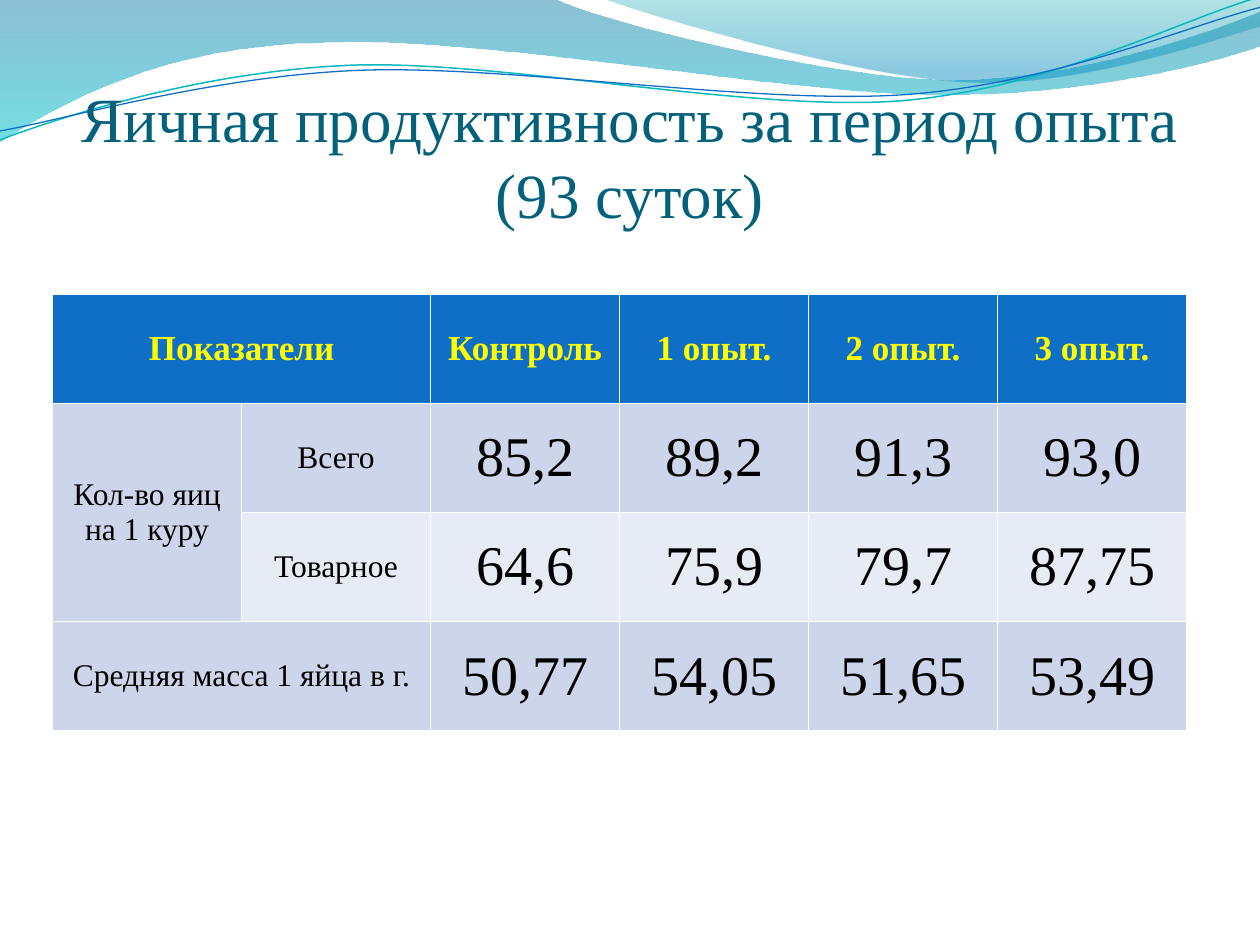
"""Build the slide on egg productivity over the trial period."""
from dataclasses import dataclass

import lxml.etree
import pptx
import pptx.dml.color
import pptx.enum.text
import pptx.oxml.ns
import pptx.util

Cm = pptx.util.Cm
Pt = pptx.util.Pt
qn = pptx.oxml.ns.qn
Point = tuple[float, float]


@dataclass(frozen=True)
class Theme:
    font: str = "Times New Roman"
    title: str = "04617B"
    header_fill: str = "0F6FC6"
    header_text: str = "FFFF00"
    body_text: str = "000000"
    band: str = "CCD5EA"
    light_band: str = "E7EBF5"
    title_size: float = 36
    header_size: float = 20
    label_size: float = 18
    value_size: float = 32


@dataclass(frozen=True)
class GradientStop:
    position: float
    color: str
    opacity: int


@dataclass(frozen=True)
class Wave:
    start: Point
    segments: tuple[tuple[Point, ...], ...]
    gradient: tuple[GradientStop, ...] = ()
    line_color: str = ""
    line_width: float = 0
    rotation: float = 0


THEME = Theme()
COLUMN_WIDTH = 3.81
ROW_HEIGHT = 2.2
LABEL_COLUMNS = 2

WAVES = (
    Wave((0, -0.03), (
        ((11.18, -0.03),),
        ((12.09, 0.43), (16.87, 1.6), (19.25, 1.6)),
        ((21.67, 1.6), (24.33, 0.66), (25.4, 0.23)),
        ((25.43, 0.91),),
        ((24.97, 1.12), (22.1, 1.93), (18.95, 1.91)),
        ((15.8, 1.91), (9.7, 0.71), (6.53, 0.86)),
        ((3.28, 0.89), (1.17, 2.11), (-0.03, 2.87)),
        ((0, -0.03),),
    ), gradient=(GradientStop(0, "0074A1", 45), GradientStop(1, "00C6CF", 55))),
    Wave((12.17, -0.03), (
        ((12.93, 0.28), (17.32, 1.57), (19.53, 1.65)),
        ((21.74, 1.75), (24.41, 0.81), (25.4, 0.53)),
        ((25.4, 0),),
        ((12.17, -0.03),),
    ), gradient=(GradientStop(0, "00A1A9", 30), GradientStop(0.8, "008BBF", 45))),
    Wave((-0.05, 2.22), (
        ((1.19, 1.82), (4.02, 1.04), (7.05, 1.05)),
        ((10.05, 1.07), (15.02, 2.37), (18.08, 2.29)),
        ((21.13, 2.2), (23.87, 0.91), (25.41, 0.55)),
    ), line_color="0AB8BF", line_width=0.85, rotation=357.3),
    Wave((-0.04, 2.04), (
        ((1.16, 1.9), (4.18, 1.15), (7.2, 1.16)),
        ((10.25, 1.18), (15.13, 2.23), (18.18, 2.17)),
        ((21.21, 2.1), (23.93, 1.06), (25.45, 0.75)),
    ), line_color="0F6FC6", line_width=0.75, rotation=357.3),
)

ROWS = (
    ("Показатели", "", "Контроль", "1 опыт.", "2 опыт.", "3 опыт."),
    ("Кол-во яиц на 1 куру", "Всего", "85,2", "89,2", "91,3", "93,0"),
    ("", "Товарное", "64,6", "75,9", "79,7", "87,75"),
    ("Средняя масса 1 яйца в г.", "", "50,77", "54,05", "51,65", "53,49"),
)
MERGES = (((0, 0), (0, 1)), ((1, 0), (2, 0)), ((3, 0), (3, 1)))


def rgb(color: str) -> pptx.dml.color.RGBColor:
    return pptx.dml.color.RGBColor.from_string(color)


def bend_segments(shape, wave: Wave) -> None:
    steps = iter(list(shape.element.spPr.iter(qn("a:lnTo"))))
    for segment in wave.segments:
        corners = [next(steps) for _ in segment]
        if len(corners) == 3:
            curve = lxml.etree.Element(qn("a:cubicBezTo"))
            corners[0].addprevious(curve)
            for corner in corners:
                curve.append(corner[0])
                corner.getparent().remove(corner)


def draw_wave(slide, wave: Wave) -> None:
    outline = [wave.start, *(point for segment in wave.segments for point in segment)]
    points = [(Cm(x), Cm(y)) for x, y in outline]
    builder = slide.shapes.build_freeform(*points[0], scale=1.0)
    builder.add_line_segments(points[1:], close=bool(wave.gradient))
    shape = builder.convert_to_shape()
    bend_segments(shape, wave)
    shape.rotation = wave.rotation
    shape.shadow.inherit = False
    if not wave.gradient:
        shape.fill.background()
        shape.line.color.rgb = rgb(wave.line_color)
        shape.line.width = Pt(wave.line_width)
        return
    shape.line.fill.background()
    shape.fill.gradient()
    shape.fill.gradient_angle = 270
    for stop, wanted in zip(shape.fill.gradient_stops, wave.gradient):
        stop.position = wanted.position
        stop.color.rgb = rgb(wanted.color)
    for color, wanted in zip(shape.element.spPr.iter(qn("a:srgbClr")), wave.gradient):
        alpha = lxml.etree.SubElement(color, qn("a:alpha"))
        alpha.set("val", str(wanted.opacity * 1000))


def format_text(frame, size: float, color: str, bold: bool = False) -> None:
    for paragraph in frame.paragraphs:
        paragraph.alignment = pptx.enum.text.PP_ALIGN.CENTER
        for run in paragraph.runs:
            run.font.name = THEME.font
            run.font.size = Pt(size)
            run.font.bold = bold
            run.font.color.rgb = rgb(color)


def draw_title(slide, text: str) -> None:
    title = slide.shapes.add_textbox(Cm(1.27), Cm(1.47), Cm(22.86), Cm(3.18))
    frame = title.text_frame
    frame.word_wrap = True
    frame.vertical_anchor = pptx.enum.text.MSO_ANCHOR.BOTTOM
    frame.margin_left = frame.margin_right = frame.margin_bottom = 0
    frame.margin_top = Cm(0.13)
    frame.text = text
    format_text(frame, THEME.title_size, THEME.title)


def draw_table(slide) -> None:
    columns = len(ROWS[0])
    table = slide.shapes.add_table(
        len(ROWS), columns, Cm(1.06), Cm(5.93),
        Cm(COLUMN_WIDTH * columns), Cm(ROW_HEIGHT * len(ROWS)),
    ).table
    for first, last in MERGES:
        table.cell(*first).merge(table.cell(*last))
    row_fills = (THEME.header_fill, THEME.band, THEME.light_band, THEME.band)
    for row, texts in enumerate(ROWS):
        for column, text in enumerate(texts):
            cell = table.cell(row, column)
            if cell.is_spanned:
                continue
            cell.fill.solid()
            cell.fill.fore_color.rgb = rgb(row_fills[row])
            cell.vertical_anchor = pptx.enum.text.MSO_ANCHOR.MIDDLE
            cell.text_frame.text = text
            if row == 0:
                format_text(cell.text_frame, THEME.header_size, THEME.header_text, True)
            else:
                size = THEME.label_size if column < LABEL_COLUMNS else THEME.value_size
                format_text(cell.text_frame, size, THEME.body_text)


def main() -> None:
    presentation = pptx.Presentation()
    presentation.slide_width, presentation.slide_height = Cm(25.4), Cm(19.05)
    slide = presentation.slides.add_slide(presentation.slide_layouts[6])
    for wave in WAVES:
        draw_wave(slide, wave)
    draw_title(slide, "Яичная продуктивность за период опыта (93 суток)")
    draw_table(slide)
    presentation.save("out.pptx")


if __name__ == "__main__":
    main()
